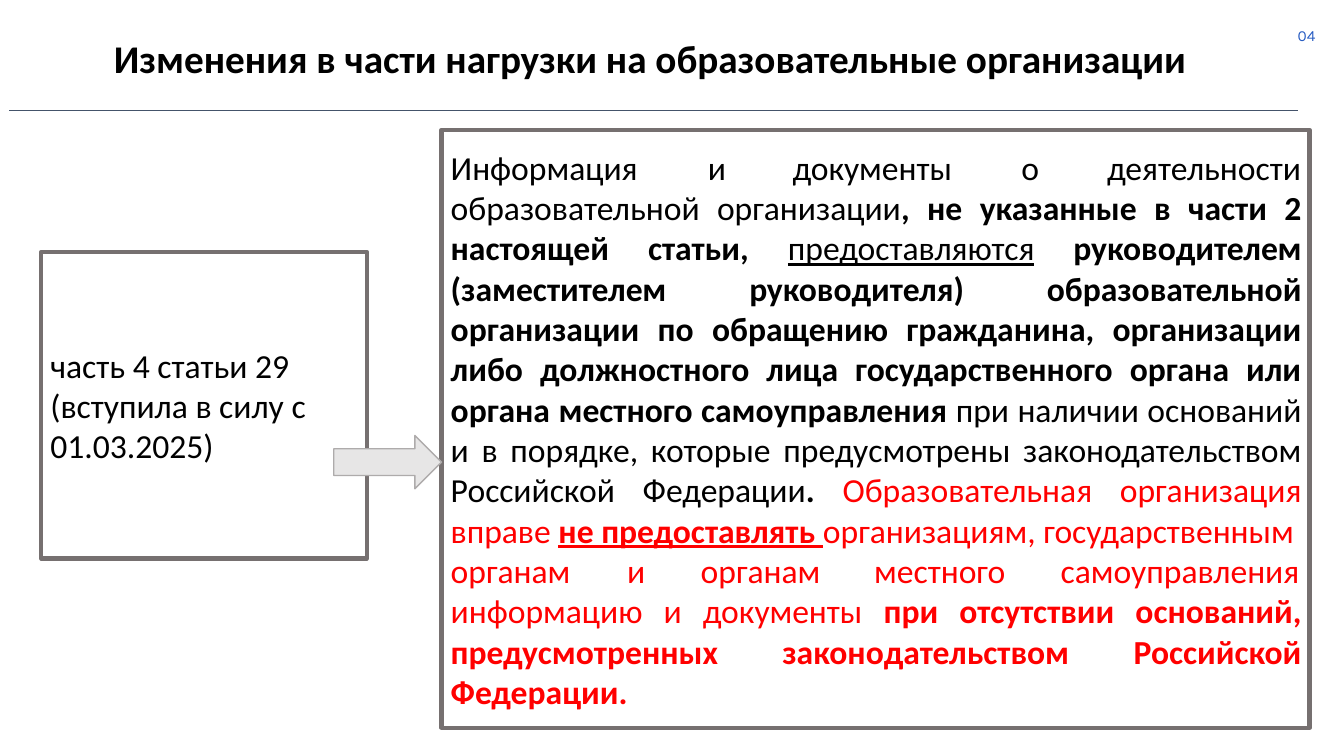
from lxml import etree
from pptx import Presentation
from pptx.dml.color import RGBColor
from pptx.enum.shapes import MSO_CONNECTOR, MSO_SHAPE
from pptx.enum.text import MSO_ANCHOR, PP_ALIGN
from pptx.oxml.ns import qn
from pptx.util import Inches, Pt

BLACK = RGBColor(0x00, 0x00, 0x00)
RED = RGBColor(0xFF, 0x00, 0x00)
BLUE = RGBColor(0x27, 0x5C, 0xC2)
SLATE = RGBColor(0x44, 0x53, 0x6A)
FRAME_GRAY = RGBColor(0x76, 0x70, 0x70)
ARROW_FILL = RGBColor(0xE7, 0xE6, 0xE6)
ARROW_LINE = RGBColor(0xAE, 0xAB, 0xAB)

# Each paragraph: alignment, tab stops in inches, colour, runs.
# A run is (text, style), where the style holds "b" for bold and "u" for underlined.
ARTICLE = [
    (PP_ALIGN.LEFT, [], BLACK, [("часть 4 статьи 29 (вступила в силу с 01.03.2025)", "")]),
]
PROVISION = [
    (PP_ALIGN.LEFT, [2.55, 3.39, 5.66, 6.51], BLACK,
     [("Информация\tи\tдокументы\tо\tдеятельности", "")]),
    (PP_ALIGN.JUSTIFY, [], BLACK, [
        ("образовательной организации", ""),
        (", не указанные в части 2 настоящей статьи, ", "b"),
        ("предоставляются", "u"),
        (" руководителем (заместителем руководителя) образовательной организации "
         "по обращению гражданина, организации либо должностного лица "
         "государственного органа или органа местного самоуправления ", "b"),
        ("при наличии оснований и в порядке, которые предусмотрены "
         "законодательством Российской Федерации", ""),
        (". ", "b"),
        ("Образовательная организация вправе ", "", RED),
        ("не предоставлять ", "bu", RED),
        ("организациям, государственным", "", RED)]),
    (PP_ALIGN.LEFT, [1.75, 2.48, 4.2, 6.05], RED,
     [("органам\tи\tорганам\tместного\tсамоуправления", "")]),
    (PP_ALIGN.JUSTIFY, [], RED, [
        ("информацию и документы ", ""),
        ("при отсутствии оснований, предусмотренных законодательством "
         "Российской Федерации.", "b")]),
]


def set_font(font, size, color, name="Calibri"):
    font.name = name
    font.size = Pt(size)
    font.color.rgb = color


def clear_insets(tf):
    tf.margin_left = tf.margin_top = tf.margin_right = tf.margin_bottom = 0
    tf.vertical_anchor = MSO_ANCHOR.TOP


def add_tabs(p, stops):
    tab_list = etree.SubElement(p._p.get_or_add_pPr(), qn("a:tabLst"))
    for stop in stops:
        etree.SubElement(tab_list, qn("a:tab"), pos=str(Inches(stop)), algn="l")


def add_header(slide, left, top, width):
    title = slide.shapes.title
    title.left, title.top = Inches(left + 1.04), Inches(top + 0.1)
    title.width, title.height = Inches(11), Inches(0.5)
    tf = title.text_frame
    clear_insets(tf)
    p = tf.paragraphs[0]
    p.text = "Изменения в части нагрузки на образовательные организации"
    p.alignment = PP_ALIGN.LEFT
    set_font(p.font, 28, BLACK)
    p.font.bold = True

    number = slide.shapes.add_textbox(
        Inches(left + width), Inches(top + 0.02), Inches(0.25), Inches(0.2))
    clear_insets(number.text_frame)
    p = number.text_frame.paragraphs[0]
    p.text = "04"
    set_font(p.font, 11, BLUE, "Karla")

    y = Inches(top + 0.85)
    rule = slide.shapes.add_connector(
        MSO_CONNECTOR.STRAIGHT, Inches(left), y, Inches(left + width), y)
    rule.line.color.rgb = SLATE
    rule.line.width = Pt(0.48)
    etree.SubElement(rule._element.spPr, qn("a:effectLst"))


def add_frame(slide, left, top, width, height, paragraphs):
    sp = slide.shapes.add_shape(
        MSO_SHAPE.RECTANGLE, Inches(left), Inches(top), Inches(width), Inches(height))
    sp.shadow.inherit = False
    sp.fill.background()
    sp.line.color.rgb = FRAME_GRAY
    sp.line.width = Pt(3.12)
    tf = sp.text_frame
    tf.word_wrap = True
    tf.vertical_anchor = MSO_ANCHOR.MIDDLE
    tf.margin_left, tf.margin_right = Inches(0.09), Inches(0.08)
    for i, (alignment, stops, color, runs) in enumerate(paragraphs):
        p = tf.paragraphs[0] if i == 0 else tf.add_paragraph()
        p.alignment = alignment
        if stops:
            add_tabs(p, stops)
        set_font(p.font, 24, color)
        for text, style, *run_color in runs:
            r = p.add_run()
            r.text = text
            set_font(r.font, 24, run_color[0] if run_color else color)
            r.font.bold = "b" in style
            r.font.underline = "u" in style


def add_arrow(slide, left, top, width, height):
    sp = slide.shapes.add_shape(
        MSO_SHAPE.RIGHT_ARROW, Inches(left), Inches(top), Inches(width), Inches(height))
    sp.shadow.inherit = False
    sp.fill.solid()
    sp.fill.fore_color.rgb = ARROW_FILL
    sp.line.color.rgb = ARROW_LINE
    sp.line.width = Pt(0.96)


def main():
    prs = Presentation()
    prs.slide_width, prs.slide_height = Inches(13.33), Inches(7.5)
    slide = prs.slides.add_slide(prs.slide_layouts[5])
    add_header(slide, 0.09, 0.24, 12.78)
    add_frame(slide, 0.41, 2.5, 3.23, 3.04, ARTICLE)
    add_frame(slide, 4.38, 1.29, 8.61, 5.93, PROVISION)
    add_arrow(slide, 3.31, 4.32, 1.07, 0.53)
    prs.save("out.pptx")


if __name__ == "__main__":
    main()
